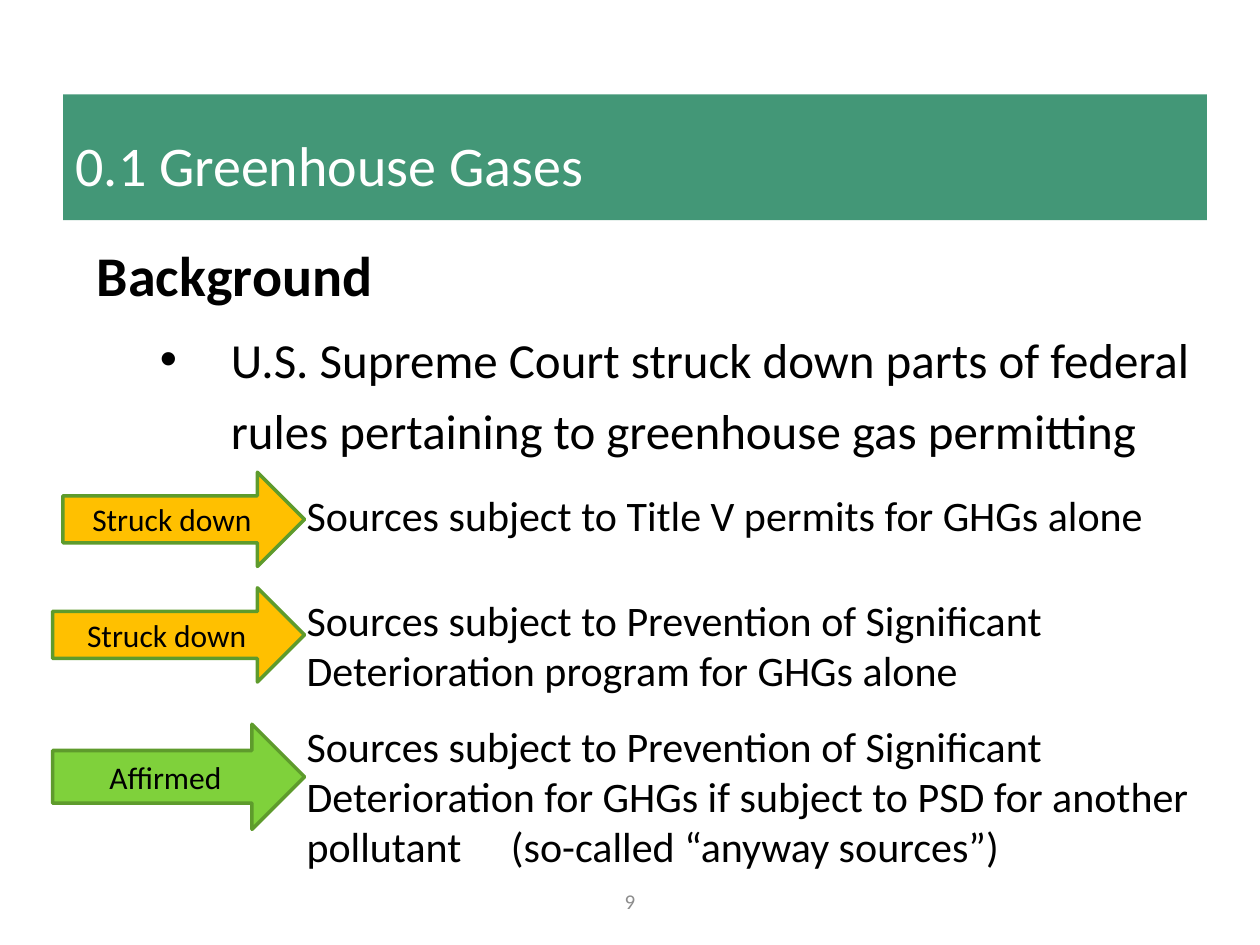
"""Build the greenhouse gas slide with its court rulings."""

from dataclasses import dataclass
from typing import Any, Optional

from lxml.etree import SubElement
from pptx import Presentation
from pptx.dml.color import RGBColor
from pptx.enum.shapes import MSO_SHAPE
from pptx.enum.text import MSO_ANCHOR, MSO_AUTO_SIZE, PP_ALIGN
from pptx.oxml.ns import qn
from pptx.util import Cm, Pt


@dataclass(frozen=True)
class Theme:
    font: str = "Calibri"
    ink: str = "000000"
    paper: str = "FFFFFF"
    muted: str = "8C8C8C"
    bar: str = "439777"
    struck: str = "FFC000"
    affirmed: str = "7FD13B"
    outline: str = "5E9B2C"
    heading_size: int = 32
    point_size: int = 28
    source_size: int = 24
    label_size: int = 18
    number_size: int = 12


@dataclass(frozen=True)
class Box:
    left: float
    top: float
    width: float
    height: float

    def lengths(self) -> tuple:
        return Cm(self.left), Cm(self.top), Cm(self.width), Cm(self.height)


@dataclass(frozen=True)
class Ruling:
    label: str
    color: str
    arrow: Box
    source: str
    source_top: float
    source_height: float
    tab: Optional[float] = None


THEME = Theme()
ARROW_TIP = 6.14
SOURCE_LEFT, SOURCE_WIDTH = 5.93, 18.84


def arrow_box(left: float, top: float, height: float) -> Box:
    return Box(left, top, ARROW_TIP - left, height)


RULINGS = (
    Ruling("Struck down", THEME.struck, arrow_box(1.27, 9.52, 1.9),
           "Sources subject to Title V permits for GHGs alone", 9.74, 1.27),
    Ruling("Struck down", THEME.struck, arrow_box(1.06, 11.85, 1.9),
           "Sources subject to Prevention of Significant Deterioration "
           "program for GHGs alone", 11.85, 2.31),
    Ruling("Affirmed", THEME.affirmed, arrow_box(1.06, 14.6, 2.12),
           "Sources subject to Prevention of Significant Deterioration for GHGs "
           "if subject to PSD for another pollutant\t(so-called “anyway sources”)",
           14.39, 3.33, tab=4.12),
)


def format_paragraph(paragraph: Any, size: int, color: str = THEME.ink,
                     bold: bool = False, align: Any = PP_ALIGN.LEFT) -> None:
    paragraph.alignment = align
    for run in paragraph.runs:
        run.font.name = THEME.font
        run.font.size = Pt(size)
        run.font.bold = bold
        run.font.color.rgb = RGBColor.from_string(color)


def space_paragraph(paragraph: Any) -> None:
    paragraph.line_spacing = 1.2
    paragraph.space_before = Pt(0)
    paragraph.space_after = Pt(6)


def indent_paragraph(paragraph: Any, margin: float, indent: float, bullet: str = "") -> None:
    properties = paragraph._p.get_or_add_pPr()
    properties.set("marL", str(Cm(margin)))
    properties.set("indent", str(Cm(indent)))
    if bullet:
        SubElement(properties, qn("a:buFont"), typeface="Arial")
        SubElement(properties, qn("a:buChar"), char=bullet)


def place(shape: Any, box: Box) -> None:
    shape.left, shape.top, shape.width, shape.height = box.lengths()


def fill_shape(shape: Any, color: str) -> None:
    shape.fill.solid()
    shape.fill.fore_color.rgb = RGBColor.from_string(color)


def write_title(title: Any, text: str) -> None:
    place(title, Box(1.27, 1.9, 23.06, 2.54))
    fill_shape(title, THEME.bar)
    frame = title.text_frame
    frame.text = text
    frame.auto_size = MSO_AUTO_SIZE.NONE
    frame.vertical_anchor = MSO_ANCHOR.MIDDLE
    format_paragraph(frame.paragraphs[0], THEME.heading_size, THEME.paper)
    space_paragraph(frame.paragraphs[0])


def write_body(body: Any, heading: str, point: str) -> None:
    place(body, Box(1.7, 4.44, 23.7, 5.08))
    frame = body.text_frame
    frame.text = f"{heading}\n{point}"
    frame.auto_size = MSO_AUTO_SIZE.NONE
    frame.vertical_anchor = MSO_ANCHOR.TOP
    for paragraph in frame.paragraphs:
        space_paragraph(paragraph)
    first, second = frame.paragraphs
    format_paragraph(first, THEME.heading_size, bold=True)
    indent_paragraph(first, 0, 0)
    format_paragraph(second, THEME.point_size)
    indent_paragraph(second, 2.7, -1.43, "•")


def add_text(shapes: Any, box: Box, text: str, size: int, color: str = THEME.ink,
             align: Any = PP_ALIGN.LEFT) -> Any:
    shape = shapes.add_textbox(*box.lengths())
    frame = shape.text_frame
    frame.word_wrap = True
    frame.text = text
    format_paragraph(frame.paragraphs[0], size, color, align=align)
    return shape


def add_ruling(slide: Any, ruling: Ruling) -> None:
    group = slide.shapes.add_group_shape()
    box = Box(SOURCE_LEFT, ruling.source_top, SOURCE_WIDTH, ruling.source_height)
    source = add_text(group.shapes, box, ruling.source, THEME.source_size)
    source.text_frame.auto_size = MSO_AUTO_SIZE.SHAPE_TO_FIT_TEXT
    if ruling.tab is not None:
        properties = source.text_frame.paragraphs[0]._p.get_or_add_pPr()
        tabs = SubElement(properties, qn("a:tabLst"))
        SubElement(tabs, qn("a:tab"), pos=str(Cm(ruling.tab)), algn="l")

    arrow = group.shapes.add_shape(MSO_SHAPE.RIGHT_ARROW, *ruling.arrow.lengths())
    arrow.shadow.inherit = False
    fill_shape(arrow, ruling.color)
    arrow.line.color.rgb = RGBColor.from_string(THEME.outline)
    arrow.line.width = Pt(2)
    arrow.text_frame.text = ruling.label
    arrow.text_frame.vertical_anchor = MSO_ANCHOR.MIDDLE
    format_paragraph(arrow.text_frame.paragraphs[0], THEME.label_size, align=PP_ALIGN.CENTER)


def main() -> None:
    presentation = Presentation()
    presentation.slide_width, presentation.slide_height = Cm(25.4), Cm(19.05)
    slide = presentation.slides.add_slide(presentation.slide_layouts[0])
    write_title(slide.shapes.title, "0.1 Greenhouse Gases")
    write_body(slide.placeholders[1], "Background",
               "U.S. Supreme Court struck down parts of federal rules "
               "pertaining to greenhouse gas permitting")
    number = add_text(slide.shapes, Box(8.68, 17.65, 8.04, 1.02), "9",
                      THEME.number_size, THEME.muted, PP_ALIGN.CENTER)
    number.text_frame.vertical_anchor = MSO_ANCHOR.MIDDLE
    for ruling in RULINGS:
        add_ruling(slide, ruling)
    presentation.save("out.pptx")


if __name__ == "__main__":
    main()
